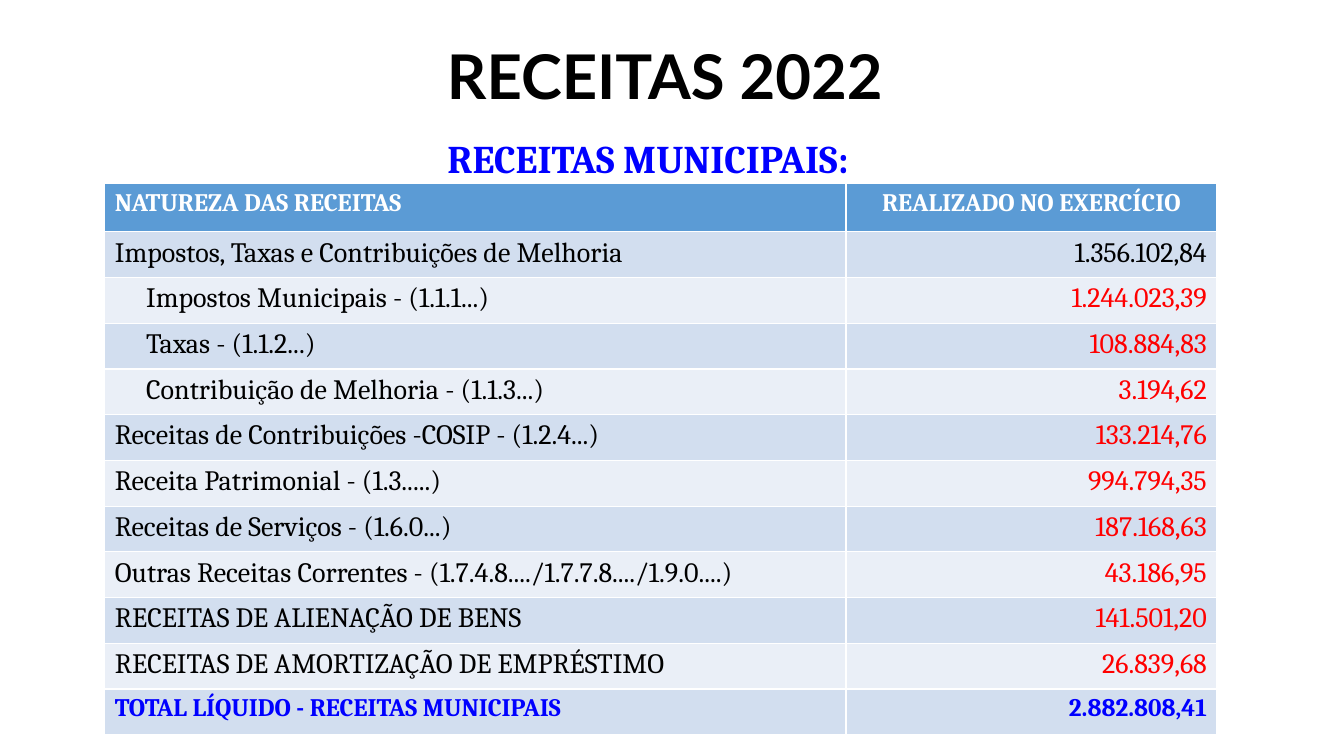
from pptx import Presentation
from pptx.dml.color import RGBColor
from pptx.enum.text import MSO_ANCHOR, PP_ALIGN
from pptx.util import Inches, Pt


def add_run(p, text, size, color, bold, font="Cambria"):
    r = p.add_run()
    r.text = text
    r.font.name = font
    r.font.size = Pt(size)
    r.font.bold = bold
    r.font.color.rgb = RGBColor.from_string(color)


prs = Presentation()
prs.slide_width = Inches(13.33)
prs.slide_height = Inches(7.5)
s = prs.slides.add_slide(prs.slide_layouts[6])

headings = [
    ("RECEITAS 2022 ", (0.92, 0.23, 11.5, 1.11), 44, "000000", "Lato", MSO_ANCHOR.MIDDLE, 0),
    ("RECEITAS MUNICIPAIS: ", (0.92, 1.34, 11.1, 0.62), 28, "0000FF", "Cambria", MSO_ANCHOR.TOP, 10),
]
for text, box, size, color, font, anchor, before in headings:
    tf = s.shapes.add_textbox(*map(Inches, box)).text_frame
    tf.word_wrap = True
    tf.vertical_anchor = anchor
    p = tf.paragraphs[0]
    p.alignment = PP_ALIGN.CENTER
    p.line_spacing = 0.9
    p.space_before = Pt(before)
    add_run(p, text, size, color, True, font)

rows = [
    ("NATUREZA DAS RECEITAS", "REALIZADO NO EXERCÍCIO"),
    ("Impostos, Taxas e Contribuições de Melhoria", "1.356.102,84"),
    ("Impostos Municipais - (1.1.1...)", "1.244.023,39"),
    ("Taxas - (1.1.2...)", "108.884,83"),
    ("Contribuição de Melhoria - (1.1.3...)", "3.194,62"),
    ("Receitas de Contribuições -COSIP - (1.2.4...)", "133.214,76"),
    ("Receita Patrimonial - (1.3.....)", "994.794,35"),
    ("Receitas de Serviços - (1.6.0...)", "187.168,63"),
    ("Outras Receitas Correntes - (1.7.4.8..../1.7.7.8..../1.9.0....)", "43.186,95"),
    ("RECEITAS DE ALIENAÇÃO DE BENS", "141.501,20"),
    ("RECEITAS DE AMORTIZAÇÃO DE EMPRÉSTIMO", "26.839,68"),
    ("TOTAL LÍQUIDO - RECEITAS MUNICIPAIS", "2.882.808,41"),
]
subitems = (2, 3, 4)
last = len(rows) - 1
header_height, table_height = 0.48, 5.47

table = s.shapes.add_table(len(rows), 2, Inches(1.04), Inches(1.82),
                           Inches(11.03), Inches(table_height)).table
table.columns[0].width = Inches(7.35)
table.columns[1].width = Inches(3.68)

for i, row in enumerate(rows):
    table.rows[i].height = Inches(header_height if i == 0 else (table_height - header_height) / last)
    if i == 0:
        fill, size, colors = "5B9BD5", 18, ("FFFFFF", "FFFFFF")
    else:
        fill = "D2DEEF" if i % 2 else "EAEFF7"
        size, colors = 20, ("000000", "000000" if i == 1 else "FF0000")
    if i == last:
        size, colors = 18, ("0000FF", "0000FF")
    for j, text in enumerate(row):
        cell = table.cell(i, j)
        cell.fill.solid()
        cell.fill.fore_color.rgb = RGBColor.from_string(fill)
        if j == 0 and i in subitems:
            cell.margin_left = Inches(0.41)
        p = cell.text_frame.paragraphs[0]
        if j == 1:
            p.alignment = PP_ALIGN.CENTER if i == 0 else PP_ALIGN.RIGHT
        add_run(p, text, size, colors[j], i in (0, last))

prs.save("out.pptx")
